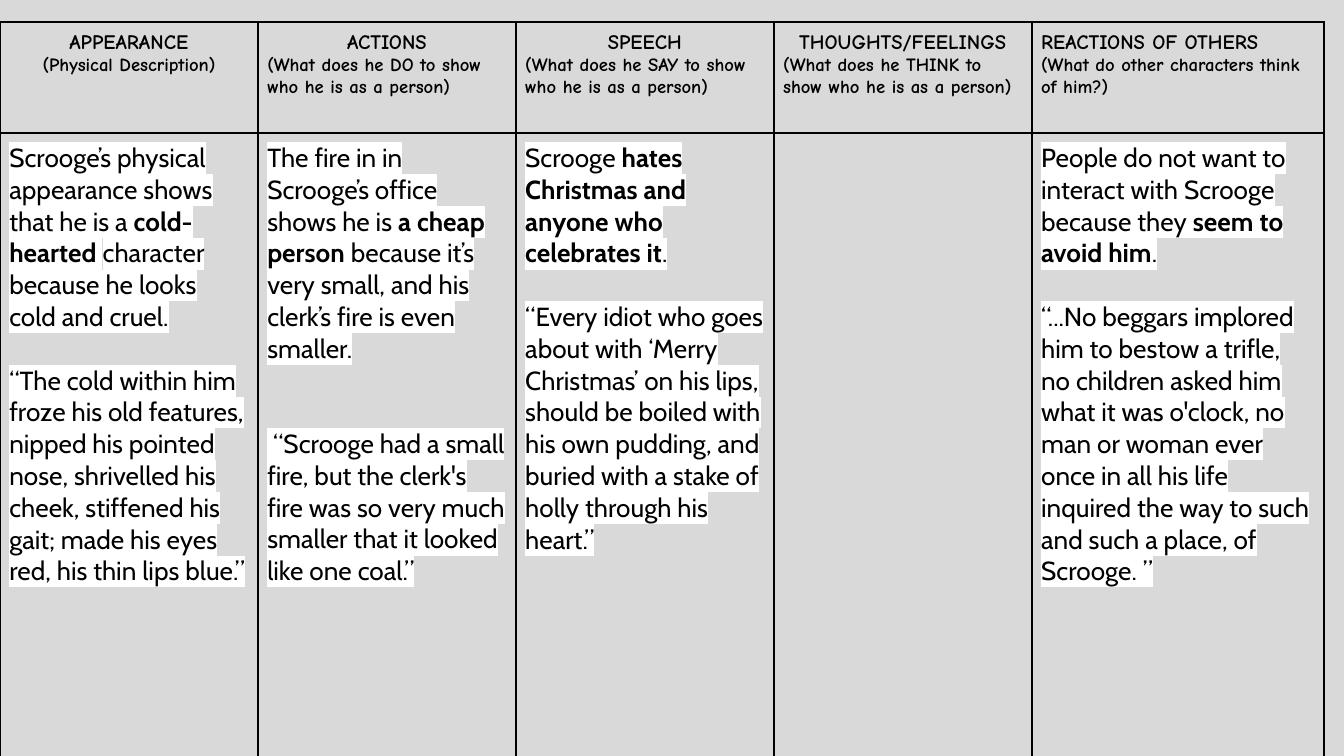
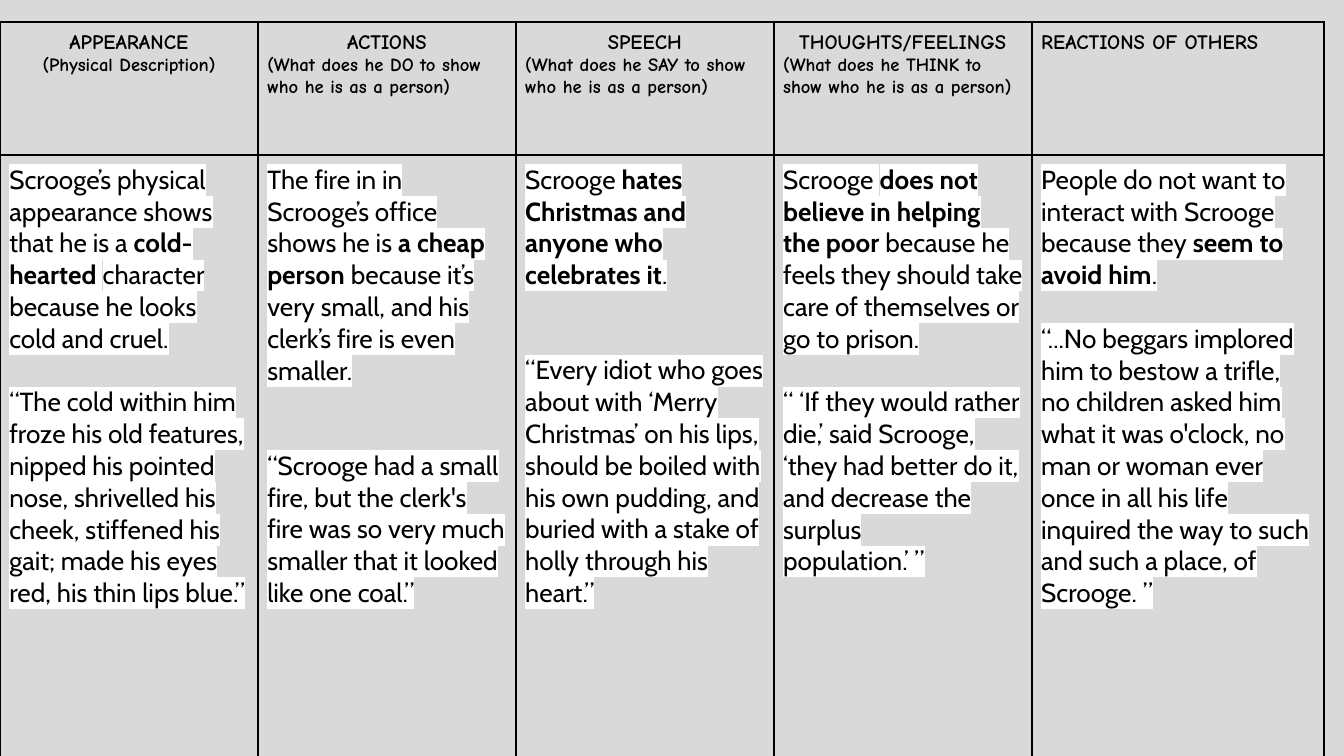
from dataclasses import dataclass

from lxml.etree import SubElement
from pptx import Presentation
from pptx.dml.color import RGBColor as Rgb
from pptx.enum.text import PP_ALIGN as Align
from pptx.oxml.ns import qn
from pptx.util import Pt


@dataclass(frozen=True)
class Theme:
    """Colours, fonts and sizes shared by both slides."""

    ground: str = "D9D9D9"
    ink: str = "000000"
    marker: str = "FFFFFF"
    heading_font: str = "Comic Neue"
    body_font: str = "Cabin"
    heading_size: float = 11
    prompt_size: float = 10
    body_size: float = 14
    body_line: float = 17
    border: float = 1
    inset: float = 5


THEME = Theme()
SLIDE_SIZE = (720, 405)
CHART_BOX = (0, 11.7, 709.4, 468.4)
LAST_COLUMN = 156.6

HEADINGS = [
    ("APPEARANCE", "(Physical Description)", Align.CENTER, Align.CENTER),
    ("ACTIONS", "(What does he DO to show who he is as a person)", Align.CENTER, Align.LEFT),
    ("SPEECH", "(What does he SAY to show who he is as a person)", Align.CENTER, Align.LEFT),
    ("THOUGHTS/FEELINGS", "(What does he THINK to show who he is as a person)",
     Align.CENTER, Align.LEFT),
]
REACTIONS_TITLE = "REACTIONS OF OTHERS"
REACTIONS_PROMPT = "(What do other characters think of him?)"

APPEARANCE = [
    (0, "Scrooge’s physical appearance shows that he is a **cold-hearted **"
        "character because he looks cold and cruel."),
    (1, "“The cold within him froze his old features, nipped his pointed nose, shrivelled "
        "his cheek, stiffened his gait; made his eyes red, his thin lips blue.”"),
]
ACTIONS_CLAIM = ("The fire in in Scrooge’s office shows he is** a cheap person **because it’s "
                 "very small, and his clerk’s fire is even smaller.")
ACTIONS_QUOTE = ("“Scrooge had a small fire, but the clerk's fire was so very much smaller "
                 "that it looked like one coal.”")
SPEECH_CLAIM = "Scrooge **hates Christmas and anyone who celebrates it**."
SPEECH_QUOTE = ("“Every idiot who goes about with ‘Merry Christmas’ on his lips, should be boiled "
                "with his own pudding, and buried with a stake of holly through his heart.”")
THOUGHTS = [
    (0, "Scrooge **does not believe in helping the poor **because he feels they should "
        "take care of themselves or go to prison."),
    (1, "“ ‘If they would rather die,’ said Scrooge, ‘they had better do it, "
        "and decrease the surplus"),
    (0, "population.’ ”"),
]
REACTIONS = [
    (0, "People do not want to interact with Scrooge because they **seem to avoid him**."),
    (1, "“...No beggars implored him to bestow a trifle, no children asked him what it was "
        "o'clock, no man or woman ever once in all his life inquired the way to such and "
        "such a place, of Scrooge. ”"),
]


def style_run(run, font, size, bold):
    """Set the typeface, size, weight and ink of one run."""
    run.font.color.rgb = Rgb.from_string(THEME.ink)
    run.font.name = font
    run.font.size = Pt(size)
    run.font.bold = bold


def highlight(run):
    """Put the marker colour behind a run."""
    ink = run.font._element.find(qn("a:solidFill"))
    marker = SubElement(run.font._element, qn("a:highlight"))
    SubElement(marker, qn("a:srgbClr"), val=THEME.marker)
    ink.addnext(marker)


def style_cell(cell):
    """Give a cell its fill, insets and four borders."""
    cell.fill.solid()
    cell.fill.fore_color.rgb = Rgb.from_string(THEME.ground)
    cell.margin_left = cell.margin_right = Pt(THEME.inset)
    cell.margin_top = cell.margin_bottom = Pt(THEME.inset)
    properties = cell._tc.get_or_add_tcPr()
    for order, side in enumerate(("a:lnL", "a:lnR", "a:lnT", "a:lnB")):
        edge = SubElement(properties, qn(side), w=str(Pt(THEME.border)))
        SubElement(SubElement(edge, qn("a:solidFill")), qn("a:srgbClr"), val=THEME.ink)
        properties.insert(order, edge)


def next_paragraph(cell, index):
    """Return the first paragraph of a cell, or a new one after it."""
    frame = cell.text_frame
    return frame.add_paragraph() if index else frame.paragraphs[0]


def fill_heading(cell, title, prompt, title_align, prompt_align):
    """Write a trait title with its prompt below."""
    lines = [(title, THEME.heading_size, title_align)]
    if prompt:
        lines.append((prompt, THEME.prompt_size, prompt_align))
    for index, (words, size, align) in enumerate(lines):
        line = next_paragraph(cell, index)
        line.text = words
        line.alignment = align
        style_run(line.runs[0], THEME.heading_font, size, True)


def fill_evidence(cell, passages):
    """Write highlighted passages, with ** around the bold words."""
    for index, (gap_lines, words) in enumerate(passages):
        passage = next_paragraph(cell, index)
        passage.space_before = Pt(gap_lines * THEME.body_line)
        for part, phrase in enumerate(words.split("**")):
            run = passage.add_run()
            run.text = phrase
            style_run(run, THEME.body_font, THEME.body_size, part % 2 == 1)
            highlight(run)


def add_trait_chart(slide, box, heading_height, headings, evidence):
    """Place the character trait table in the given box."""
    left, top, width, height = box
    traits = slide.shapes.add_table(2, len(headings), *map(Pt, box)).table
    traits.first_row = traits.horz_banding = False
    even_width = (width - LAST_COLUMN) / (len(headings) - 1)
    for column in traits.columns:
        column.width = Pt(even_width)
    traits.columns[len(headings) - 1].width = Pt(LAST_COLUMN)
    traits.rows[0].height = Pt(heading_height)
    traits.rows[1].height = Pt(height - heading_height)
    for cell in traits.iter_cells():
        style_cell(cell)
    for index, (heading, passages) in enumerate(zip(headings, evidence)):
        fill_heading(traits.cell(0, index), *heading)
        fill_evidence(traits.cell(1, index), passages)


def add_trait_slide(deck, heading_height, reactions_prompt, evidence):
    """Add one slide with the trait table on the shared ground."""
    slide = deck.slides.add_slide(deck.slide_layouts[6])
    slide.background.fill.solid()
    slide.background.fill.fore_color.rgb = Rgb.from_string(THEME.ground)
    reactions = (REACTIONS_TITLE, reactions_prompt, Align.LEFT, Align.LEFT)
    add_trait_chart(slide, CHART_BOX, heading_height, HEADINGS + [reactions], evidence)


def main():
    """Build the two trait slides and save them."""
    deck = Presentation()
    deck.slide_width, deck.slide_height = map(Pt, SLIDE_SIZE)
    add_trait_slide(deck, 59.5, REACTIONS_PROMPT, [
        APPEARANCE,
        [(0, ACTIONS_CLAIM), (2, " " + ACTIONS_QUOTE)],
        [(0, SPEECH_CLAIM), (1, SPEECH_QUOTE)],
        [],
        REACTIONS,
    ])
    add_trait_slide(deck, 71.2, "", [
        APPEARANCE,
        [(0, ACTIONS_CLAIM), (2, ACTIONS_QUOTE)],
        [(0, SPEECH_CLAIM), (2, SPEECH_QUOTE)],
        THOUGHTS,
        REACTIONS,
    ])
    deck.save("out.pptx")


if __name__ == "__main__":
    main()
